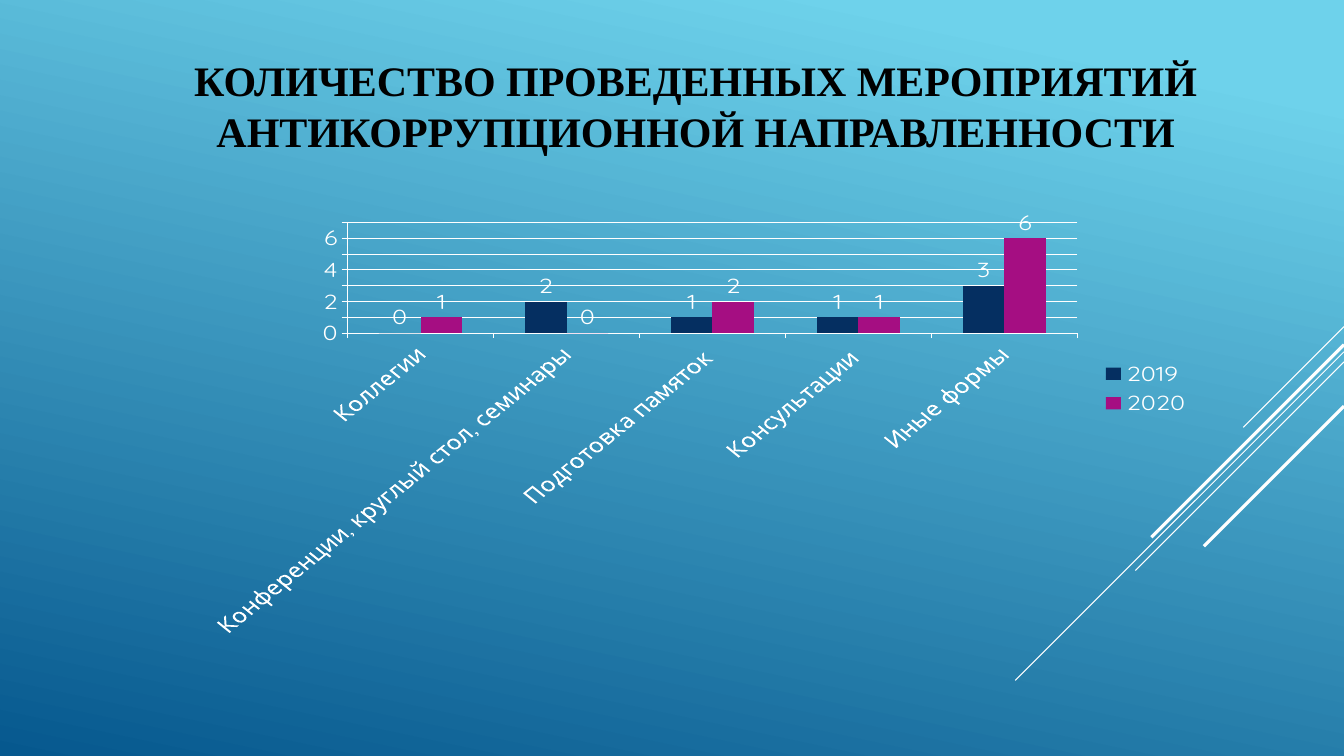
from dataclasses import dataclass

from lxml.etree import SubElement
from pptx import Presentation
from pptx.chart.data import CategoryChartData
from pptx.dml.color import RGBColor
from pptx.enum.chart import XL_CHART_TYPE as ChartType
from pptx.enum.chart import XL_LABEL_POSITION as LabelPosition
from pptx.enum.chart import XL_LEGEND_POSITION as LegendPosition
from pptx.enum.chart import XL_TICK_MARK as TickMark
from pptx.enum.shapes import MSO_CONNECTOR as Connector
from pptx.enum.text import MSO_ANCHOR as Anchor
from pptx.enum.text import MSO_AUTO_SIZE as AutoSize
from pptx.enum.text import PP_ALIGN as Align
from pptx.oxml.ns import qn
from pptx.util import Inches, Pt


@dataclass(frozen=True)
class Theme:
    sky: RGBColor = RGBColor.from_string("6ED2EB")
    deep: RGBColor = RGBColor.from_string("06588E")
    white: RGBColor = RGBColor.from_string("FFFFFF")
    black: RGBColor = RGBColor.from_string("000000")
    title_font: str = "Times New Roman"
    chart_font: str = "Quicksand"
    title_size: int = 30
    chart_size: int = 18
    hairline: float = 0.75


@dataclass(frozen=True)
class Ray:
    """A diagonal that leaves the right edge at `top` and falls to the left."""
    top: float
    reach: float
    weight: float


@dataclass(frozen=True)
class Year:
    label: str
    counts: tuple[int, ...]
    color: str


THEME = Theme()
SLIDE_WIDTH, SLIDE_HEIGHT = 13.33, 7.5
HEADING = "КОЛИЧЕСТВО ПРОВЕДЕННЫХ МЕРОПРИЯТИЙ АНТИКОРРУПЦИОННОЙ НАПРАВЛЕННОСТИ"
RAYS = (
    Ray(3.24, 1.0, 0.75),
    Ray(3.49, 3.26, 0.75),
    Ray(3.59, 2.07, 0.75),
    Ray(3.42, 1.91, 2.25),
    Ray(4.03, 1.39, 2.25),
)
EVENTS = ("Коллегии", "Конференции, круглый стол, семинары",
          "Подготовка памяток ", "Консультации ", "Иные формы")
YEARS = (
    Year("2019", (0, 2, 1, 1, 3), "052F61"),
    Year("2020", (1, 0, 2, 1, 6), "A50E82"),
)


def paint_background(slide) -> None:
    fill = slide.background.fill
    fill.gradient()
    fill.gradient_angle = 360 - 102
    for stop, color, position in zip(fill.gradient_stops, (THEME.sky, THEME.deep), (0.1, 1)):
        stop.color.rgb = color
        stop.position = position


def draw_ray(slide, ray: Ray) -> None:
    line = slide.shapes.add_connector(
        Connector.STRAIGHT, Inches(SLIDE_WIDTH), Inches(ray.top),
        Inches(SLIDE_WIDTH - ray.reach), Inches(ray.top + ray.reach))
    line.line.color.rgb = THEME.white
    line.line.width = Pt(ray.weight)
    SubElement(line._element.spPr, qn("a:effectLst"))


def write_heading(slide) -> None:
    heading = slide.shapes.title
    heading.left, heading.top = Inches(1.61), Inches(0.22)
    heading.width, heading.height = Inches(10.59), Inches(1.65)
    frame = heading.text_frame
    frame.word_wrap = True
    frame.auto_size = AutoSize.NONE
    frame.vertical_anchor = Anchor.MIDDLE
    paragraph = frame.paragraphs[0]
    paragraph.alignment = Align.CENTER
    run = paragraph.add_run()
    run.text = HEADING
    run.font.name, run.font.size = THEME.title_font, Pt(THEME.title_size)
    run.font.bold = True
    run.font.color.rgb = THEME.black


def style_line(line) -> None:
    line.color.rgb = THEME.white
    line.width = Pt(THEME.hairline)


def draw_event_chart(slide) -> None:
    data = CategoryChartData(number_format="General")
    data.categories = EVENTS
    for year in YEARS:
        data.add_series(year.label, year.counts)
    chart = slide.shapes.add_chart(
        ChartType.COLUMN_CLUSTERED, Inches(1.89), Inches(2.08),
        Inches(10.03), Inches(4.25), data).chart
    chart.has_title = False
    chart.font.name, chart.font.size = THEME.chart_font, Pt(THEME.chart_size)
    chart.font.color.rgb = THEME.white

    # Columns and their values
    plot = chart.plots[0]
    plot.gap_width, plot.overlap = 150, 0
    plot.vary_by_categories = False
    for series, year in zip(plot.series, YEARS):
        series.format.fill.solid()
        series.format.fill.fore_color.rgb = RGBColor.from_string(year.color)
        series.data_labels.show_value = True
        series.data_labels.position = LabelPosition.OUTSIDE_END

    # Axes: the category labels turn by themselves to fit
    for axis in (chart.category_axis, chart.value_axis):
        axis.major_tick_mark = TickMark.OUTSIDE
        axis.minor_tick_mark = TickMark.NONE
        style_line(axis.format.line)
    counts = chart.value_axis
    counts.minimum_scale, counts.maximum_scale, counts.major_unit = 0, 7, 1
    counts.has_major_gridlines = True
    style_line(counts.major_gridlines.format.line)

    # Legend
    chart.has_legend = True
    chart.legend.position = LegendPosition.RIGHT
    chart.legend.include_in_layout = False


def main() -> None:
    deck = Presentation()
    deck.slide_width, deck.slide_height = Inches(SLIDE_WIDTH), Inches(SLIDE_HEIGHT)
    slide = deck.slides.add_slide(deck.slide_layouts[5])
    paint_background(slide)
    for ray in RAYS:
        draw_ray(slide, ray)
    write_heading(slide)
    draw_event_chart(slide)
    deck.save("out.pptx")


if __name__ == "__main__":
    main()
